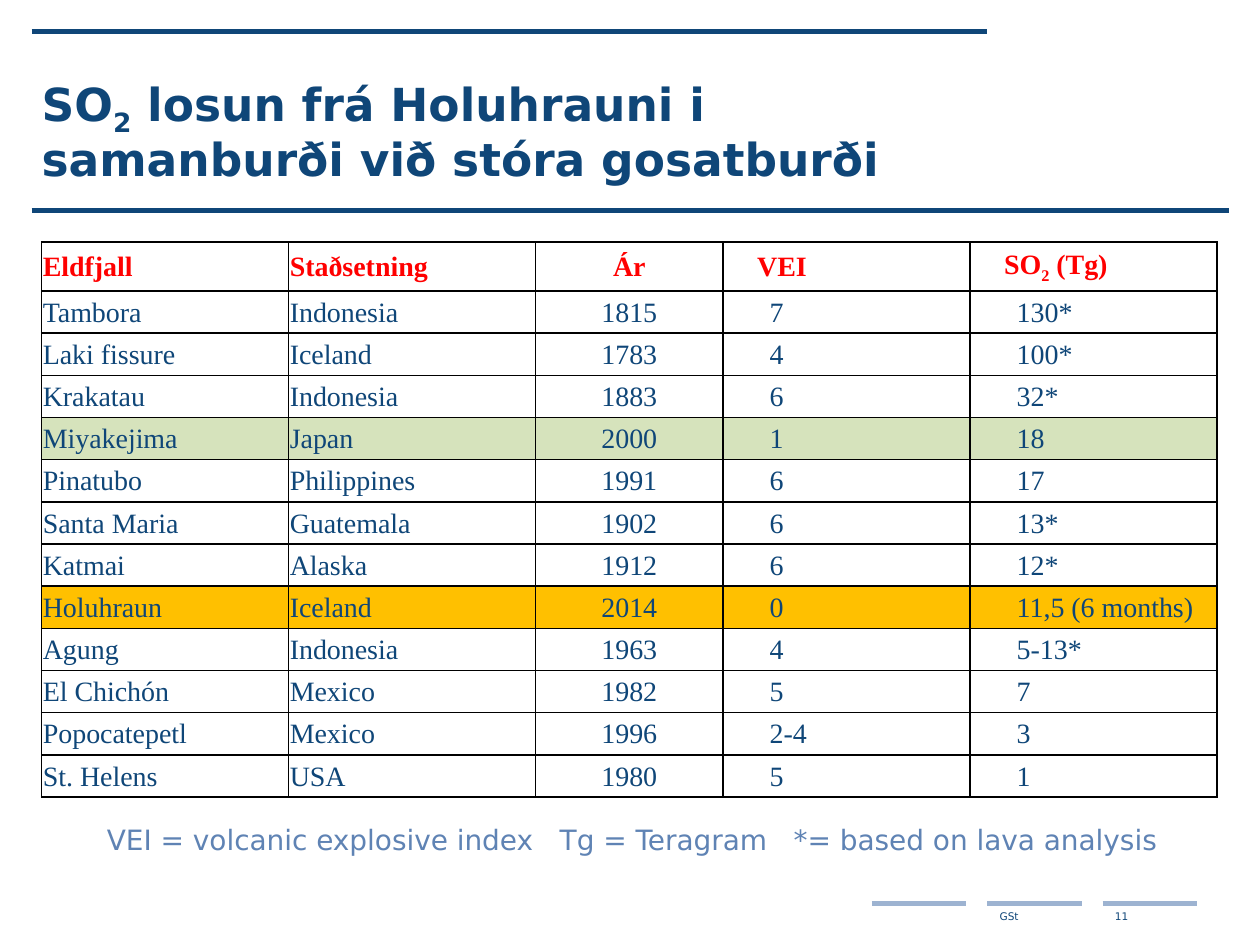
from lxml import etree
from pptx import Presentation
from pptx.dml.color import RGBColor
from pptx.enum.shapes import MSO_CONNECTOR
from pptx.enum.text import MSO_ANCHOR, MSO_AUTO_SIZE, PP_ALIGN
from pptx.oxml.ns import qn
from pptx.util import Inches, Pt

STRAIGHT = MSO_CONNECTOR.STRAIGHT
MIDDLE = MSO_ANCHOR.MIDDLE
NO_FIT = MSO_AUTO_SIZE.NONE
LEFT, CENTER = PP_ALIGN.LEFT, PP_ALIGN.CENTER

COLORS = {
    "navy": "0F4678",
    "steel": "5F83B4",
    "pale": "9DB3D1",
    "red": "FF0000",
    "black": "000000",
    "green": "D6E3BC",
    "amber": "FFC000",
}
SANS, SERIF = "DejaVu Sans", "Times New Roman"
TITLE_FORMAT = {"name": SANS, "size": Pt(26), "bold": True}
CAPTION_FORMAT = {"name": SANS, "size": Pt(16), "bold": False}
FOOTER_FORMAT = {"name": SANS, "size": Pt(6), "bold": False}
HEADER_FORMAT = {"name": SERIF, "size": Pt(16), "bold": True}
BODY_FORMAT = {"name": SERIF, "size": Pt(16), "bold": False}

FOOTER_TOP, FOOTER_LEFT, FOOTER_STEP, FOOTER_WIDTH = 7.17, 6.92, 0.915, 0.75
COLUMN_WIDTHS = [1.96, 1.96, 1.49, 1.96, 1.96]
HEADER_HEIGHT, ROW_HEIGHT = 0.39, 0.335
CENTERED_COLUMN = 2
ROW_FILLS = {"Miyakejima": "green", "Holuhraun": "amber"}
ROWS = [
    ("Eldfjall", "Staðsetning", "Ár", "VEI", ("SO", "2", " (Tg)")),
    ("Tambora", "Indonesia", "1815", "7", "130*"),
    ("Laki fissure", "Iceland", "1783", "4", "100*"),
    ("Krakatau", "Indonesia", "1883", "6", "32*"),
    ("Miyakejima", "Japan", "2000", "1", "18"),
    ("Pinatubo", "Philippines", "1991", "6", "17"),
    ("Santa Maria", "Guatemala", "1902", "6", "13*"),
    ("Katmai", "Alaska", "1912", "6", "12*"),
    ("Holuhraun", "Iceland", "2014", "0", "11,5 (6 months)"),
    ("Agung", "Indonesia", "1963", "4", "5-13*"),
    ("El Chichón", "Mexico", "1982", "5", "7"),
    ("Popocatepetl", "Mexico", "1996", "2-4", "3"),
    ("St. Helens", "USA", "1980", "5", "1"),
]


def set_attributes(target, values):
    """Set every attribute named in a dict of values."""
    for name, value in values.items():
        setattr(target, name, value)


def rgb(color):
    """Return the named palette colour."""
    return RGBColor.from_string(COLORS[color])


def write_text(paragraph, content, values, color):
    """Write a string, or a base, subscript and rest, as formatted runs."""
    parts = (content,) if isinstance(content, str) else content
    for index, part in enumerate(parts):
        run = paragraph.add_run()
        run.text = part
        set_attributes(run.font, values)
        run.font.color.rgb = rgb(color)
        if index == 1:
            run.font._element.set("baseline", "-25000")


def add_rule(slide, left, top, width, color):
    """Add a horizontal rule without a shadow."""
    rule = slide.shapes.add_connector(
        STRAIGHT, Inches(left), Inches(top), Inches(left + width), Inches(top))
    rule.line.color.rgb = rgb(color)
    rule.line.width = Pt(3)
    etree.SubElement(rule._element.spPr, qn("a:effectLst"))


def add_label(slide, box, text, values, color, wrap=True):
    """Add a one-paragraph text box."""
    shape = slide.shapes.add_textbox(*map(Inches, box))
    shape.text_frame.word_wrap = wrap
    write_text(shape.text_frame.paragraphs[0], text, values, color)


def format_title(title):
    """Place and fill the title placeholder."""
    set_attributes(title, {"left": Inches(0.33), "top": Inches(0.5),
                           "width": Inches(7.5), "height": Inches(1.08)})
    set_attributes(title.text_frame, {
        "margin_left": 0, "margin_right": 0, "margin_top": 0, "margin_bottom": 0,
        "vertical_anchor": MIDDLE, "word_wrap": True, "auto_size": NO_FIT})
    paragraph = title.text_frame.paragraphs[0]
    set_attributes(paragraph, {"alignment": LEFT, "line_spacing": 0.95,
                               "space_before": Pt(0), "space_after": Pt(8)})
    content = ("SO", "2", " losun frá Holuhrauni i samanburði við stóra gosatburði")
    write_text(paragraph, content, TITLE_FORMAT, "navy")


def add_borders(cell):
    """Draw a thin black line on each side of a cell."""
    properties = cell._tc.get_or_add_tcPr()
    for index, side in enumerate(("lnL", "lnR", "lnT", "lnB")):
        line = etree.Element(qn(f"a:{side}"), w=str(Pt(1)))
        fill = etree.SubElement(line, qn("a:solidFill"))
        etree.SubElement(fill, qn("a:srgbClr"), val=COLORS["black"])
        properties.insert(index, line)


def format_cell(cell, content, column, is_header, fill):
    """Fill, border and write one table cell."""
    indent = (0.27 if is_header else 0.37) if column > CENTERED_COLUMN else 0.01
    set_attributes(cell, {
        "margin_left": Inches(indent), "margin_right": Inches(0.01),
        "margin_top": Inches(0.01), "margin_bottom": 0, "vertical_anchor": MIDDLE})
    if fill:
        cell.fill.solid()
        cell.fill.fore_color.rgb = rgb(fill)
    else:
        cell.fill.background()
    add_borders(cell)
    paragraph = cell.text_frame.paragraphs[0]
    paragraph.alignment = CENTER if column == CENTERED_COLUMN else LEFT
    values, color = (HEADER_FORMAT, "red") if is_header else (BODY_FORMAT, "navy")
    write_text(paragraph, content, values, color)


def add_eruption_table(slide):
    """Add the table of eruptions and their sulphur emissions."""
    table = slide.shapes.add_table(
        len(ROWS), len(COLUMN_WIDTHS), Inches(0.33), Inches(1.92),
        Inches(sum(COLUMN_WIDTHS)),
        Inches(HEADER_HEIGHT + ROW_HEIGHT * (len(ROWS) - 1))).table
    set_attributes(table, {"first_row": False, "horz_banding": False})
    for column, width in zip(table.columns, COLUMN_WIDTHS):
        column.width = Inches(width)
    for row, contents in enumerate(ROWS):
        table.rows[row].height = Inches(ROW_HEIGHT if row else HEADER_HEIGHT)
        fill = ROW_FILLS.get(contents[0])
        for column, content in enumerate(contents):
            format_cell(table.cell(row, column), content, column, row == 0, fill)


def main():
    """Build and save the slide."""
    presentation = Presentation()
    presentation.slide_width, presentation.slide_height = Inches(10), Inches(7.5)
    slide = presentation.slides.add_slide(presentation.slide_layouts[5])
    format_title(slide.shapes.title)
    add_rule(slide, 0.25, 0.25, 7.58, "navy")
    add_rule(slide, 0.25, 1.67, 9.5, "navy")
    footer_lefts = [FOOTER_LEFT + FOOTER_STEP * index for index in range(3)]
    for left in footer_lefts:
        add_rule(slide, left, FOOTER_TOP, FOOTER_WIDTH, "pale")
    add_label(slide, (0.75, 6.48, 8.68, 0.37),
              "VEI = volcanic explosive index   Tg = Teragram   *= based on lava analysis",
              CAPTION_FORMAT, "steel")
    for left, text, wrap in zip(footer_lefts[1:], ("GSt", "11"), (True, False)):
        add_label(slide, (left, FOOTER_TOP, FOOTER_WIDTH, 0.24), text,
                  FOOTER_FORMAT, "navy", wrap)
    add_eruption_table(slide)
    presentation.save("out.pptx")


if __name__ == "__main__":
    main()
